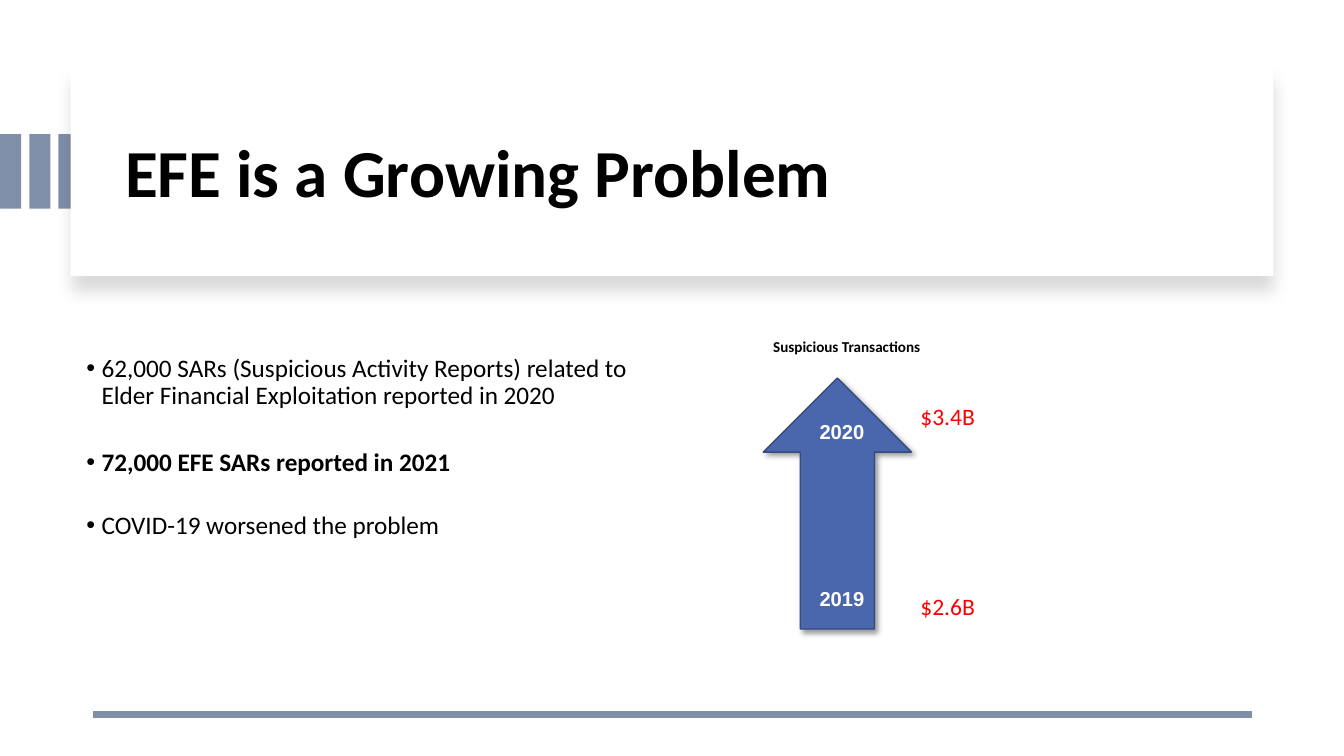
from lxml.etree import SubElement
from pptx import Presentation
from pptx.dml.color import RGBColor
from pptx.enum.shapes import MSO_CONNECTOR, MSO_SHAPE
from pptx.enum.text import MSO_ANCHOR, MSO_AUTO_SIZE, PP_ALIGN
from pptx.oxml.ns import qn
from pptx.util import Pt

PX = 9144
COLORS = {
    "slate": "7F8FA9",
    "white": "FFFFFF",
    "black": "000000",
    "blue": "4A66AC",
    "navy": "374B7F",
    "red": "FF0000",
}


def add_block(shapes, kind, place, color, shadow=None):
    block = shapes.add_shape(kind, *[PX * length for length in place])
    block.fill.solid()
    block.fill.fore_color.rgb = RGBColor.from_string(COLORS[color])
    block.line.fill.background()
    block.shadow.inherit = False
    if shadow:
        opacity, blur, distance, angle = shadow
        effects = block.element.spPr.find(qn("a:effectLst"))
        outer = SubElement(effects, qn("a:outerShdw"), blurRad=str(Pt(blur)),
                           dist=str(Pt(distance)), dir=str(angle * 60000),
                           algn="ctr", rotWithShape="0")
        tint = SubElement(outer, qn("a:srgbClr"), val=COLORS["black"])
        SubElement(tint, qn("a:alpha"), val=str(opacity * 1000))
    return block


def write(para, text, color, font_format, para_format):
    span = para.add_run()
    span.text = text
    span.font.color.rgb = RGBColor.from_string(COLORS[color])
    for name, value in font_format.items():
        setattr(span.font, name, value)
    for name, value in para_format.items():
        setattr(para, name, value)


deck = Presentation()
deck.slide_width = 1333 * PX
deck.slide_height = 750 * PX
page = deck.slides.add_slide(deck.slide_layouts[5])

stripes = page.shapes.add_group_shape()
for index in range(3):
    add_block(stripes.shapes, MSO_SHAPE.RECTANGLE, (index * 29, 133, 21, 74), "slate")

card = add_block(page.shapes, MSO_SHAPE.RECTANGLE, (70, 67, 1193, 207), "white", (15, 11, 10, 90))

title = page.shapes.title
card.element.addnext(title.element)
title_place = {"left": 114, "top": 89, "width": 1113, "height": 170}
for name, value in title_place.items():
    setattr(title, name, value * PX)
title.text_frame.vertical_anchor = MSO_ANCHOR.MIDDLE
title.text_frame.word_wrap = True
write(title.text_frame.paragraphs[0], "EFE is a Growing Problem", "black",
      {"name": "Calibri", "size": Pt(48), "bold": True},
      {"alignment": PP_ALIGN.LEFT, "line_spacing": 0.9})

rule = page.shapes.add_connector(MSO_CONNECTOR.STRAIGHT, 1242 * PX, 709 * PX, 92 * PX, 709 * PX)
rule.line.color.rgb = RGBColor.from_string(COLORS["slate"])
rule.line.width = Pt(4.5)
SubElement(rule.element.spPr, qn("a:effectLst"))

body = page.shapes.add_textbox(76 * PX, 348 * PX, 604 * PX, 288 * PX)
body.text_frame.word_wrap = True
points = [
    ("62,000 SARs (Suspicious Activity Reports) related to Elder Financial Exploitation reported in 2020", False, 0),
    ("72,000 EFE SARs reported in 2021", True, 28),
    ("COVID-19 worsened the problem", False, 26),
]
for index, (text, bold, gap) in enumerate(points):
    para = body.text_frame.add_paragraph() if index else body.text_frame.paragraphs[0]
    write(para, text, "black", {"name": "Calibri", "size": Pt(18), "bold": bold},
          {"line_spacing": 0.9, "space_before": Pt(gap)})
    properties = para._p.get_or_add_pPr()
    properties.set("marL", str(15 * PX))
    properties.set("indent", str(-15 * PX))
    SubElement(properties, qn("a:buFont"), typeface="Arial")
    SubElement(properties, qn("a:buChar"), char="•")

arrow = add_block(page.shapes, MSO_SHAPE.RIGHT_ARROW, (706, 426, 249, 147), "blue", (40, 4, 3, 45))
arrow.rotation = 270
arrow.line.color.rgb = RGBColor.from_string(COLORS["navy"])
arrow.line.width = Pt(1)

labels = [
    ("$3.4B", (903, 394, 139, 38), "red", "Calibri", 16.8, False),
    ("$2.6B", (903, 582, 139, 38), "red", "Calibri", 16.8, False),
    ("2019", (803, 577, 85, 34), "white", "Arial", 14.4, True),
    ("2020", (803, 411, 85, 34), "white", "Arial", 14.4, True),
    ("Suspicious Transactions", (757, 330, 171, 28), "black", "Calibri", 10.8, True),
]
for text, place, color, font, size, bold in labels:
    box = page.shapes.add_textbox(*[PX * length for length in place])
    box.text_frame.word_wrap = True
    box.text_frame.auto_size = MSO_AUTO_SIZE.SHAPE_TO_FIT_TEXT
    write(box.text_frame.paragraphs[0], text, color,
          {"name": font, "size": Pt(size), "bold": bold}, {"space_after": Pt(6)})

deck.save("out.pptx")
